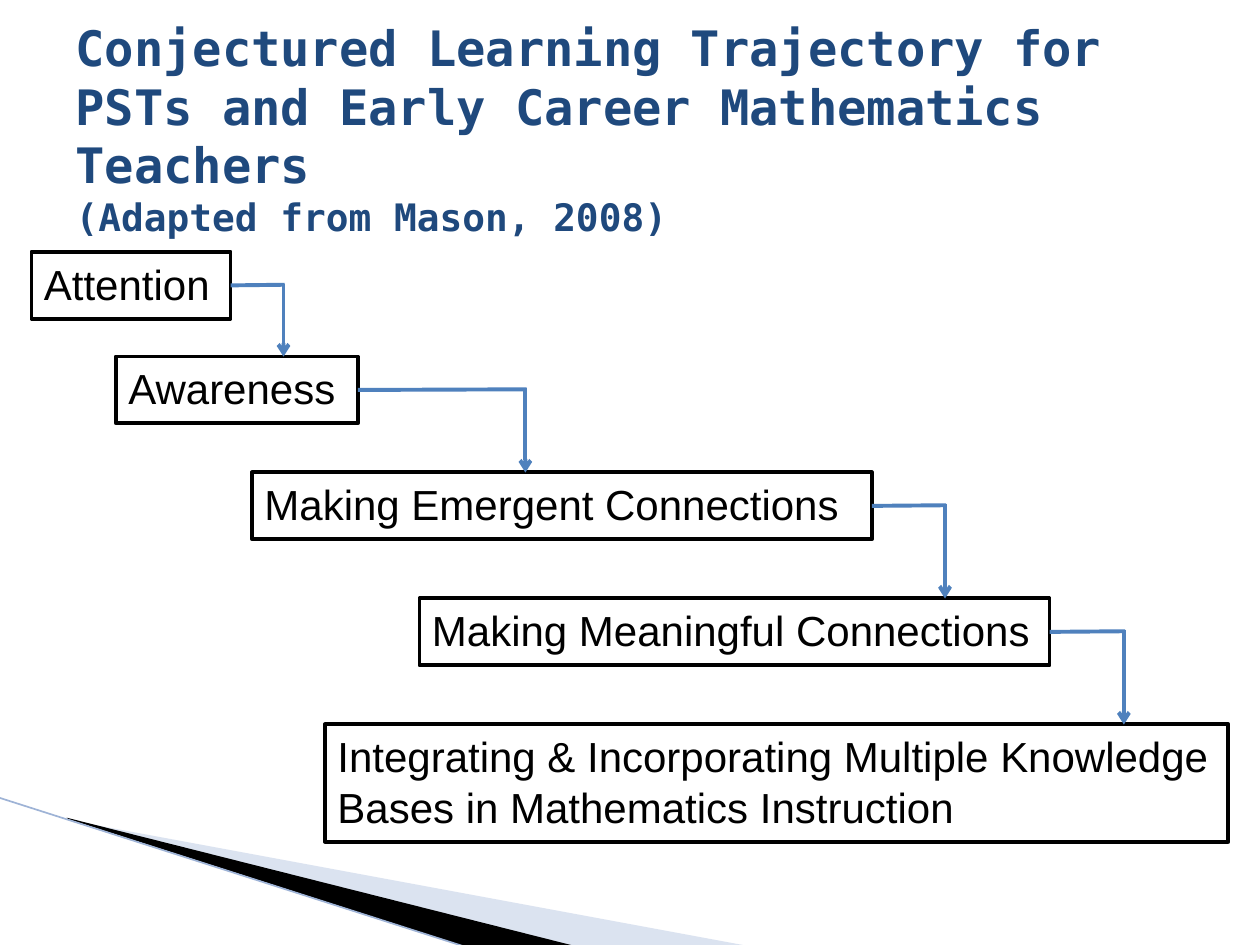
from lxml import etree
from pptx import Presentation
from pptx.dml.color import RGBColor
from pptx.enum.shapes import MSO_CONNECTOR, MSO_SHAPE
from pptx.enum.text import MSO_ANCHOR, MSO_AUTO_SIZE, PP_ALIGN
from pptx.oxml.ns import qn
from pptx.util import Pt

PX = 9144  # 100 px to the inch
RECT = MSO_SHAPE.RECTANGLE
LINE = MSO_CONNECTOR.STRAIGHT
LEFT = PP_ALIGN.LEFT
TOP, MIDDLE = MSO_ANCHOR.TOP, MSO_ANCHOR.MIDDLE
GROW, FIXED = MSO_AUTO_SIZE.SHAPE_TO_FIT_TEXT, MSO_AUTO_SIZE.NONE

BLACK = RGBColor(0x00, 0x00, 0x00)
NAVY = RGBColor(0x1F, 0x49, 0x7D)
BLUE = RGBColor(0x4F, 0x81, 0xBD)
PALE = RGBColor(0xA7, 0xB9, 0xDB)
EDGE = RGBColor(0x9E, 0xB3, 0xD6)


def style(run, name, size, color, bold):
    for key, value in {"name": name, "size": Pt(size), "bold": bold}.items():
        setattr(run.font, key, value)
    run.font.color.rgb = color


def draw_line(x1, y1, x2, y2, color, width, head=False):
    line = slide.shapes.add_connector(LINE, *(n * PX for n in (x1, y1, x2, y2)))
    line.line.color.rgb = color
    line.line.width = Pt(width)
    if head:
        etree.SubElement(line.line._get_or_add_ln(), qn("a:tailEnd"), type="arrow")
    etree.SubElement(line._element.spPr, qn("a:effectLst"))
    return line


prs = Presentation()
prs.slide_width, prs.slide_height = 1000 * PX, 750 * PX
slide = prs.slides.add_slide(prs.slide_layouts[5])

# Corner wedges
wedges = [
    ([(55, 651), (595, 751), (456, 751), (55, 650)], PALE, 40),
    ([(53, 649), (457, 751), (372, 752), (54, 650)], BLACK, 100),
]
for points, color, alpha in wedges:
    path = slide.shapes.build_freeform(*points[0], scale=PX)
    path.add_line_segments(points[1:])
    wedge = path.convert_to_shape()
    wedge.shadow.inherit = False
    wedge.fill.solid()
    wedge.fill.fore_color.rgb = color
    wedge.line.fill.background()
    if alpha < 100:
        tone = wedge._element.spPr.find(qn("a:solidFill"))[0]
        etree.SubElement(tone, qn("a:alpha"), val=str(alpha * 1000))
draw_line(-1, 633, 371, 752, EDGE, 0.95)

# Title
title = slide.shapes.title
title.left, title.top, title.width, title.height = (n * PX for n in (50, 28, 900, 148))
frame = title.text_frame
for key, value in {"word_wrap": True, "auto_size": FIXED, "vertical_anchor": MIDDLE}.items():
    setattr(frame, key, value)
para = frame.paragraphs[0]
para.alignment = LEFT
run = para.add_run()
run.text = "Conjectured Learning Trajectory for PSTs and Early Career Mathematics Teachers"
style(run, "DejaVu Sans Mono", 27.9, NAVY, True)
para.add_line_break()
run = para.add_run()
run.text = "(Adapted from Mason, 2008)"
style(run, "DejaVu Sans Mono", 21.6, NAVY, True)

# Steps: text, left, top, width, height
steps = [
    ("Attention", 25, 200, 158, 53),
    ("Awareness", 92, 283, 192, 53),
    ("Making Emergent Connections", 200, 375, 492, 53),
    ("Making Meaningful Connections", 333, 475, 500, 53),
    ("Integrating & Incorporating Multiple Knowledge Bases in Mathematics Instruction",
     258, 575, 717, 93),
]
boxes = []
for text, *place in steps:
    box = slide.shapes.add_shape(RECT, *(n * PX for n in place))
    box.shadow.inherit = False
    box.fill.background()
    box.line.color.rgb = BLACK
    box.line.width = Pt(2.25)
    frame = box.text_frame
    for key, value in {"word_wrap": True, "auto_size": GROW, "vertical_anchor": TOP}.items():
        setattr(frame, key, value)
    para = frame.paragraphs[0]
    para.alignment = LEFT
    run = para.add_run()
    run.text = text
    style(run, "Arial", 24, BLACK, False)
    boxes.append(box)

# Elbow from the right side of each step down to the next
turns = [225, 417, 750, 892]
for turn, box, step, after in zip(turns, boxes, steps, steps[1:]):
    left, top, width, height = step[1:]
    mid = top + height // 2
    across = draw_line(left + width, mid, turn + 1, mid, BLUE, 2.25)
    across.begin_connect(box, 3)
    draw_line(turn, mid - 1, turn, after[2], BLUE, 2.25, head=True)

prs.save("out.pptx")
